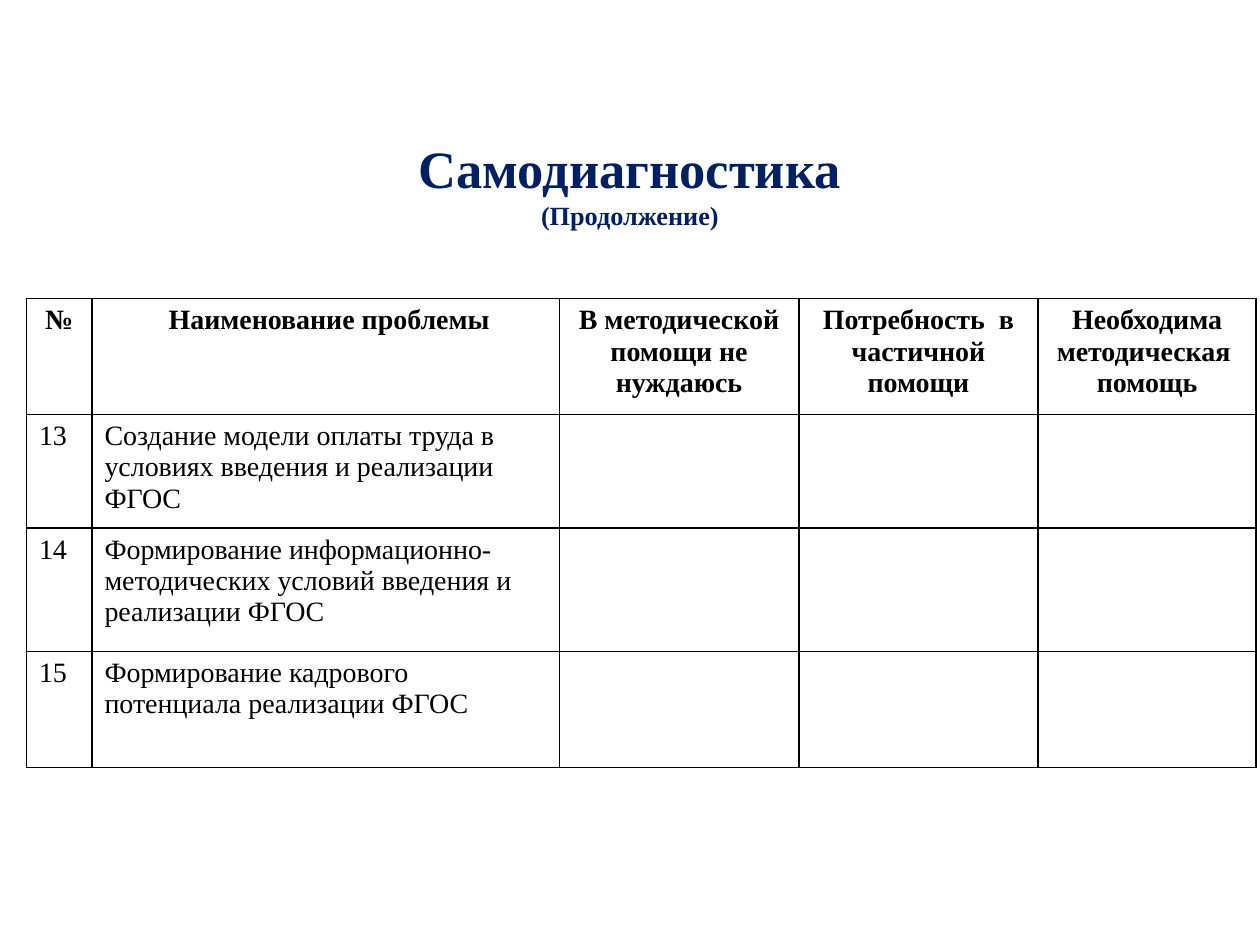
import dataclasses

import lxml.etree
import pptx
import pptx.dml.color
import pptx.enum.text
import pptx.oxml.ns
import pptx.util

ALIGN = pptx.enum.text.PP_ALIGN
NAVY, BLACK = (pptx.dml.color.RGBColor.from_string(c) for c in ("002060", "000000"))

# The page is a grid of 100 columns by 75 rows of square units
UNIT = pptx.util.Inches(0.1)
GRID_COLUMNS, GRID_ROWS = 100, 75


@dataclasses.dataclass(frozen=True)
class Theme:
    font: str = "Times New Roman"
    heading: int = 30
    subheading: int = 15
    body: int = 16
    title_color: pptx.dml.color.RGBColor = NAVY
    text_color: pptx.dml.color.RGBColor = BLACK
    border_color: str = "000000"
    border_width: int = 1


@dataclasses.dataclass(frozen=True)
class Box:
    left: float
    top: float
    width: float
    height: float

    def lengths(self):
        return [units(value) for value in dataclasses.astuple(self)]


THEME = Theme()
TITLE_BOX = Box(2.5, 10.8, 95, 7.5)
TABLE_BOX = Box(2.1, 23.7, 97.6, 37.2)

TITLE_LINES = [("Самодиагностика", THEME.heading), ("(Продолжение)", THEME.subheading)]
COLUMN_UNITS = [5.2, 37.1, 19, 19, 17.3]
ROW_UNITS = [9.2, 9, 9.8, 9.2]
HEADERS = [
    "№",
    " Наименование проблемы",
    "В методической помощи не нуждаюсь",
    "Потребность  в частичной помощи",
    "Необходима методическая  помощь",
]
PROBLEMS = [
    "Создание модели оплаты труда в условиях введения и реализации ФГОС",
    "Формирование информационно-методических условий введения и реализации ФГОС",
    "Формирование кадрового потенциала реализации ФГОС",
]
FIRST_NUMBER = 13


def units(count):
    return round(count * UNIT)


def add_span(para, text, size, color, bold):
    span = para.add_run()
    span.text = text
    values = {"name": THEME.font, "size": pptx.util.Pt(size), "bold": bold}
    for name, value in values.items():
        setattr(span.font, name, value)
    span.font.color.rgb = color


def add_borders(cell):
    properties = cell._tc.get_or_add_tcPr()
    qn = pptx.oxml.ns.qn
    width = str(pptx.util.Pt(THEME.border_width))
    for index, side in enumerate(("lnL", "lnR", "lnT", "lnB")):
        line = lxml.etree.Element(qn(f"a:{side}"), w=width)
        fill = lxml.etree.SubElement(line, qn("a:solidFill"))
        lxml.etree.SubElement(fill, qn("a:srgbClr"), val=THEME.border_color)
        properties.insert(index, line)


def add_title(page, box):
    frame = page.shapes.add_textbox(*box.lengths()).text_frame
    values = {
        "word_wrap": True,
        "vertical_anchor": pptx.enum.text.MSO_ANCHOR.MIDDLE,
        "margin_top": 0,
        "margin_bottom": 0,
    }
    for name, value in values.items():
        setattr(frame, name, value)
    para = frame.paragraphs[0]
    para.alignment = ALIGN.CENTER
    for index, (text, size) in enumerate(TITLE_LINES):
        if index:
            para.add_line_break()
        add_span(para, text, size, THEME.title_color, True)


def add_problem_table(page, box):
    shape = page.shapes.add_table(len(ROW_UNITS), len(COLUMN_UNITS), *box.lengths())
    table = shape.table
    for column, width in zip(table.columns, COLUMN_UNITS):
        column.width = units(width)
    for row, height in zip(table.rows, ROW_UNITS):
        row.height = units(height)

    # Every cell is plain with a thin frame
    for cell in table.iter_cells():
        cell.fill.background()
        add_borders(cell)

    # Header row, then numbered problems with the answers left open
    numbered = [[str(n), text] for n, text in enumerate(PROBLEMS, FIRST_NUMBER)]
    for index, texts in enumerate([HEADERS, *numbered]):
        is_header = index == 0
        for cell, text in zip(table.rows[index].cells, texts):
            para = cell.text_frame.paragraphs[0]
            para.alignment = ALIGN.CENTER if is_header else ALIGN.LEFT
            add_span(para, text, THEME.body, THEME.text_color, is_header)


def main():
    deck = pptx.Presentation()
    deck.slide_width = units(GRID_COLUMNS)
    deck.slide_height = units(GRID_ROWS)
    page = deck.slides.add_slide(deck.slide_layouts[6])
    add_title(page, TITLE_BOX)
    add_problem_table(page, TABLE_BOX)
    deck.save("out.pptx")


if __name__ == "__main__":
    main()
